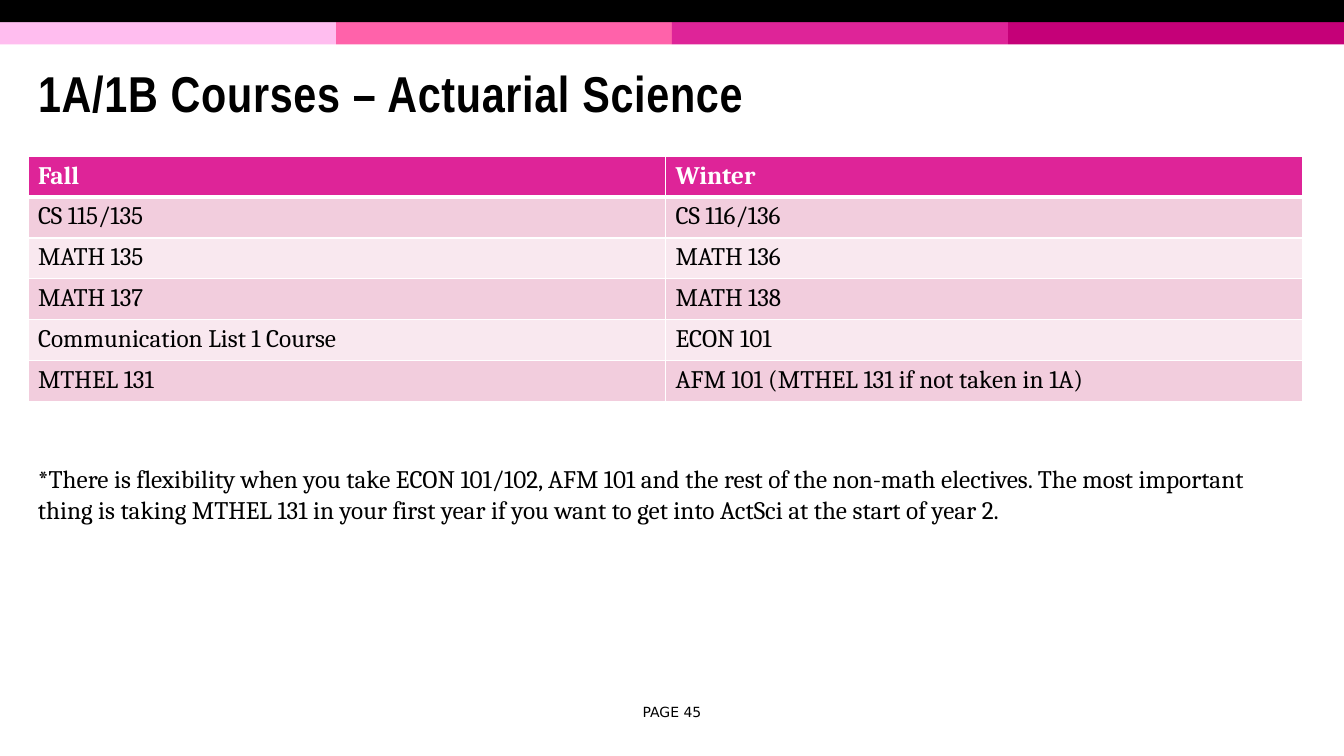
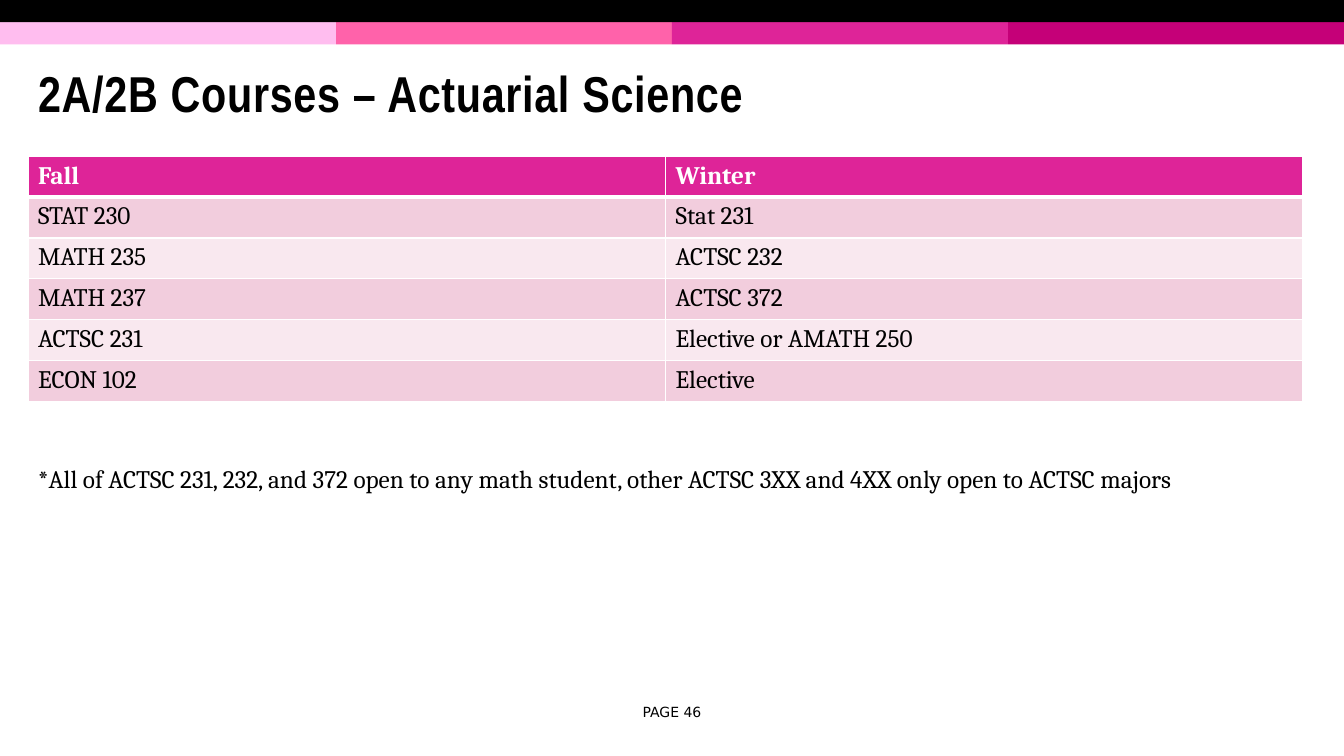
from lxml.etree import SubElement
from pptx import Presentation
from pptx.dml.color import RGBColor
from pptx.enum.shapes import MSO_SHAPE
from pptx.enum.text import MSO_ANCHOR, MSO_AUTO_SIZE, PP_ALIGN
from pptx.oxml.ns import qn
from pptx.util import Inches, Pt

COLUMNS, ROWS = 48, 34
LEFT, WIDTH = 1, 45.54
TITLE_ONLY = 5
FIRST_PAGE = 45

COURSES = [
    (
        "1A/1B Courses – Actuarial Science",
        [
            ("Fall", "Winter"),
            ("CS 115/135", "CS 116/136"),
            ("MATH 135", "MATH 136"),
            ("MATH 137", "MATH 138"),
            ("Communication List 1 Course", "ECON 101"),
            ("MTHEL 131", "AFM 101 (MTHEL 131 if not taken in 1A)"),
        ],
        "*There is flexibility when you take ECON 101/102, AFM 101 and the rest of the "
        "non-math electives. The most important thing is taking MTHEL 131 in your first "
        "year if you want to get into ActSci at the start of year 2.",
    ),
    (
        "2A/2B Courses – Actuarial Science",
        [
            ("Fall", "Winter"),
            ("STAT 230", "Stat 231"),
            ("MATH 235", "ACTSC 232"),
            ("MATH 237", "ACTSC 372"),
            ("ACTSC 231", "Elective or AMATH 250"),
            ("ECON 102", "Elective"),
        ],
        "*All of ACTSC 231, 232, and 372 open to any math student, other ACTSC 3XX "
        "and 4XX only open to ACTSC majors",
    ),
]


def color(hex_text):
    return RGBColor.from_string(hex_text)


class CourseDeck:
    black, white = "000000", "FFFFFF"
    bands = ["FFBDEF", "FF62AA", "DE2498", "C50078"]
    header_fill = "DE2498"
    row_fills = ["F2CDDD", "F9E8EF"]
    title_font, body_font, footer_font = "Arial Narrow", "Cambria", "DejaVu Sans"

    def __init__(self):
        self.deck = Presentation()
        self.deck.slide_width, self.deck.slide_height = Inches(13.33), Inches(7.5)
        self.page = None

    def across(self, columns):
        return round(self.deck.slide_width * columns / COLUMNS)

    def down(self, rows):
        return round(self.deck.slide_height * rows / ROWS)

    def area(self, left, top, width, height):
        return self.across(left), self.down(top), self.across(width), self.down(height)

    def style(self, paragraph, name, size, hex_text, bold=False):
        font = paragraph.font
        font.name, font.size, font.bold = name, Pt(size), bold
        font.color.rgb = color(hex_text)

    def add_page(self):
        self.page = self.deck.slides.add_slide(self.deck.slide_layouts[TITLE_ONLY])
        band_width = COLUMNS / len(self.bands)
        for index, fill in enumerate(self.bands):
            self.add_band(index * band_width, 1, band_width, fill)
        self.add_band(0, 0, COLUMNS, self.black)

    def add_band(self, left, top, width, fill):
        band = self.page.shapes.add_shape(
            MSO_SHAPE.RECTANGLE, *self.area(left, top, width, 1)
        )
        band.shadow.inherit = False
        band.fill.solid()
        band.fill.fore_color.rgb = color(fill)
        band.line.fill.background()

    def add_title(self, text):
        title = self.page.shapes.title
        title.left, title.top, title.width, title.height = self.area(
            LEFT, 2.13, WIDTH, 4.44
        )
        frame = title.text_frame
        frame.text = text
        frame.auto_size = MSO_AUTO_SIZE.NONE
        frame.vertical_anchor = MSO_ANCHOR.MIDDLE
        paragraph = frame.paragraphs[0]
        paragraph.alignment = PP_ALIGN.LEFT
        paragraph.line_spacing = 0.85
        self.style(paragraph, self.title_font, 36, self.black, True)
        for span in paragraph.runs:
            span.font._element.set("spc", "50")

    def add_table(self, records):
        frame = self.page.shapes.add_table(
            len(records), len(records[0]), *self.area(LEFT, 7.03, WIDTH, 11.02)
        )
        table = frame.table
        table.horz_banding = False
        for row, record in enumerate(records):
            for column, text in enumerate(record):
                self.fill_cell(table.cell(row, column), text, row)

    def fill_cell(self, cell, text, row):
        header = row == 0
        cell.text = text
        self.style(
            cell.text_frame.paragraphs[0],
            self.body_font,
            18,
            self.white if header else self.black,
            header,
        )
        self.add_borders(cell, top=3 if row == 1 else 1, bottom=3 if header else 1)
        cell.fill.solid()
        fill = self.header_fill if header else self.row_fills[(row - 1) % 2]
        cell.fill.fore_color.rgb = color(fill)

    def add_borders(self, cell, top, bottom):
        properties = cell._tc.get_or_add_tcPr()
        for side, points in (("L", 1), ("R", 1), ("T", top), ("B", bottom)):
            line = SubElement(properties, qn(f"a:ln{side}"), w=str(Pt(points)))
            fill = SubElement(line, qn("a:solidFill"))
            SubElement(fill, qn("a:srgbClr"), val=self.white)

    def add_text(self, text, place, font_name, size):
        box = self.page.shapes.add_textbox(*self.area(*place))
        frame = box.text_frame
        frame.word_wrap = True
        frame.text = text
        self.style(frame.paragraphs[0], font_name, size, self.black)
        return frame

    def add_note(self, text):
        self.add_text(text, (LEFT, 20.63, WIDTH, 3.2), self.body_font, 18)

    def add_footer(self, number):
        frame = self.add_text(
            f"PAGE {number}", (22, 31.42, 4, 1.22), self.footer_font, 10
        )
        frame.vertical_anchor = MSO_ANCHOR.MIDDLE
        frame.paragraphs[0].alignment = PP_ALIGN.CENTER


def main():
    courses = CourseDeck()
    for number, (title, records, note) in enumerate(COURSES, FIRST_PAGE):
        courses.add_page()
        courses.add_title(title)
        courses.add_table(records)
        courses.add_footer(number)
        courses.add_note(note)
    courses.deck.save("out.pptx")


if __name__ == "__main__":
    main()
